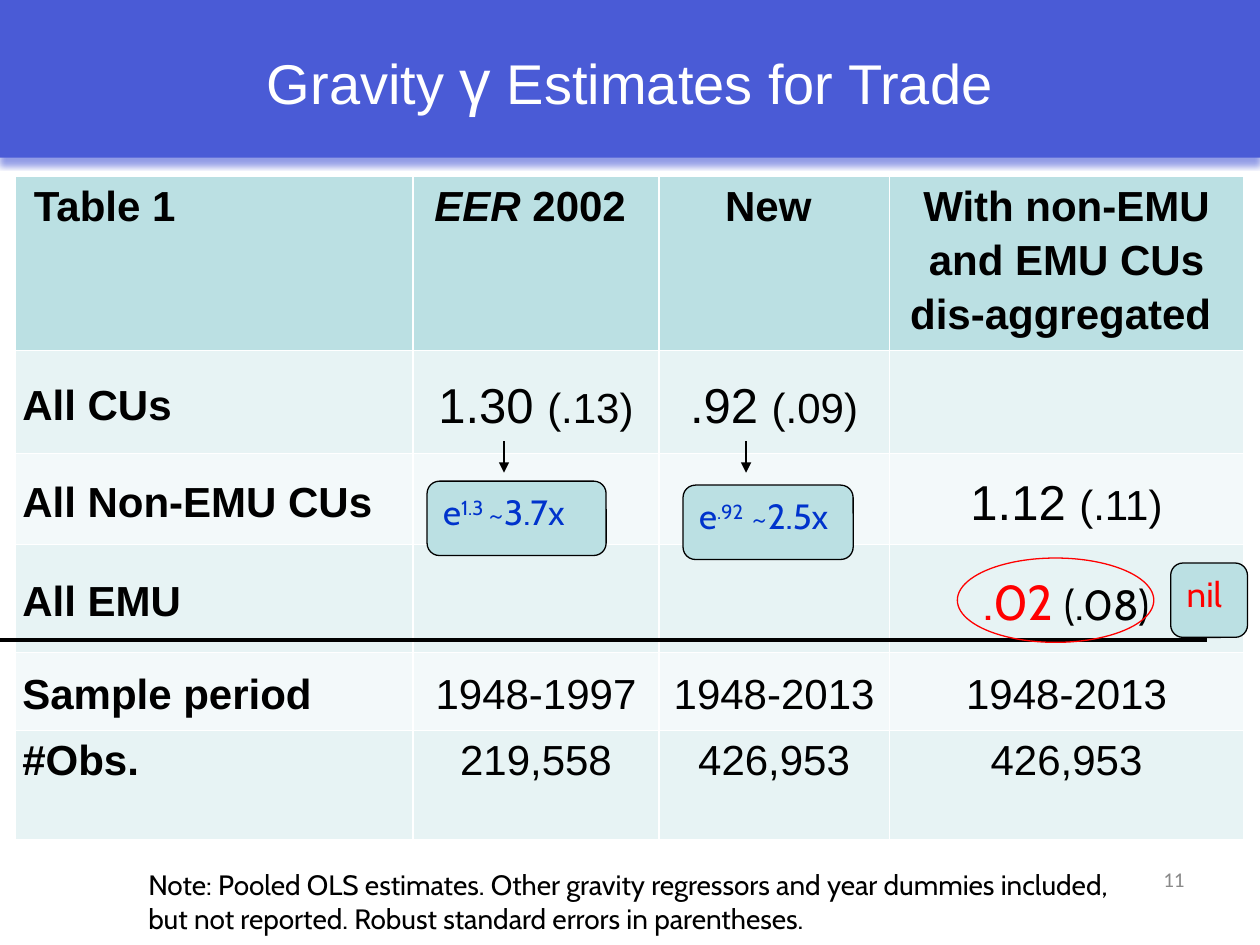
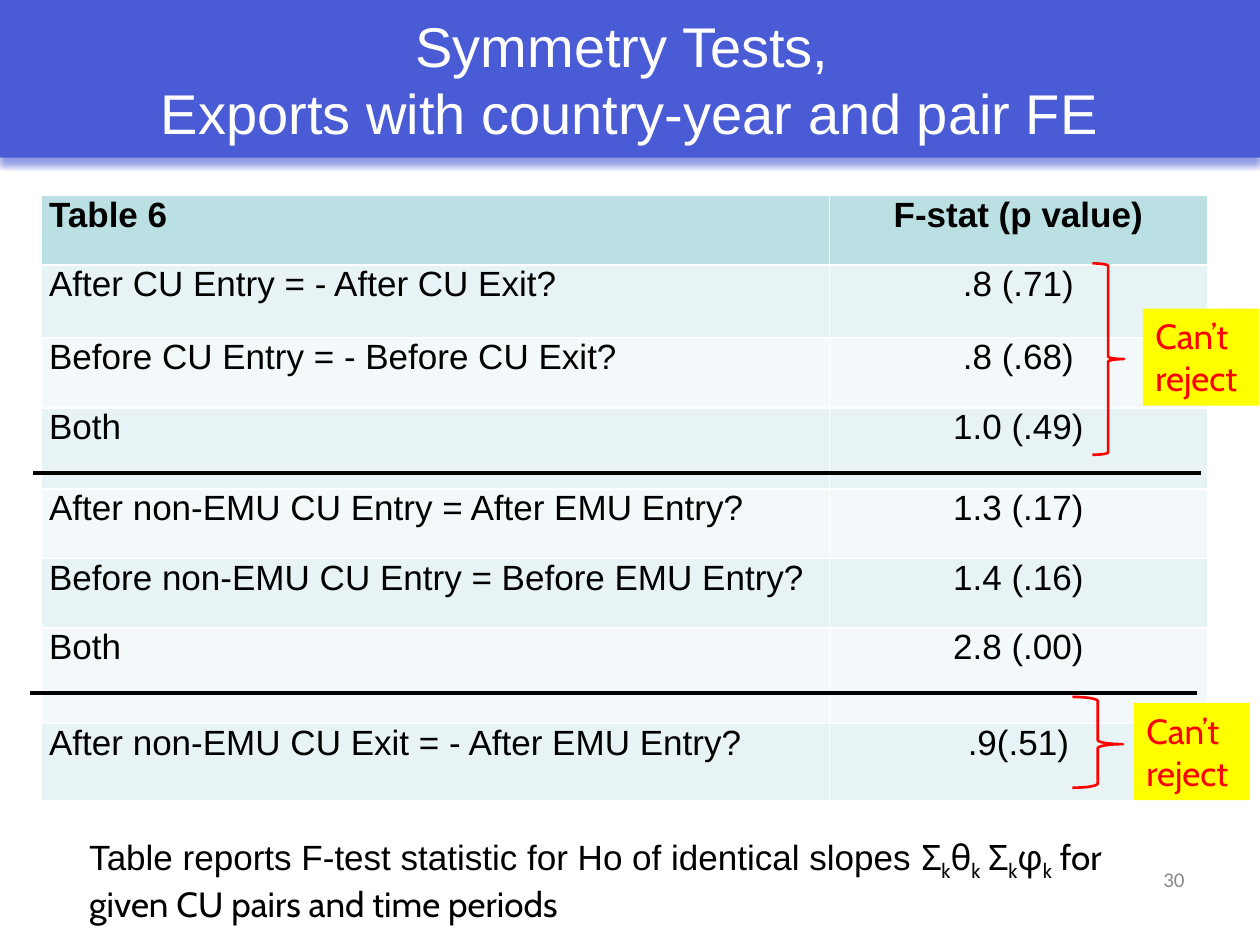
from lxml import etree
from pptx import Presentation
from pptx.dml.color import RGBColor
from pptx.enum.shapes import MSO_CONNECTOR, MSO_SHAPE
from pptx.enum.text import MSO_ANCHOR, MSO_AUTO_SIZE, PP_ALIGN
from pptx.oxml.ns import qn
from pptx.util import Cm, Pt

LEFT, CENTER, RIGHT = PP_ALIGN.LEFT, PP_ALIGN.CENTER, PP_ALIGN.RIGHT
TOP, MIDDLE = MSO_ANCHOR.TOP, MSO_ANCHOR.MIDDLE
ROUNDED, OVAL = MSO_SHAPE.ROUNDED_RECTANGLE, MSO_SHAPE.OVAL
RECTANGLE, BRACE = MSO_SHAPE.RECTANGLE, MSO_SHAPE.RIGHT_BRACE
STRAIGHT = MSO_CONNECTOR.STRAIGHT

# Shared look
BAND, HEADER, ODD_ROW, EVEN_ROW = "4A5BD6", "BBE0E3", "E7F3F4", "F3F9FA"
BLACK, WHITE, GREY, RED, BLUE, YELLOW = "000000", "FFFFFF", "898989", "FF0000", "0033CC", "FFFF00"
TITLE_FONT, NOTE_FONT, NUMBER_FONT = "Arial", "Cabin", "Calibri"
PAGE_WIDTH, PAGE_HEIGHT, BAND_HEIGHT = 25.4, 19.05, 3.18
NUMBER_BOX = (18.21, 17.35, 5.92, 1.32)

# Text is a string or a list of runs; a run is (text, changed format)
BIG, SUPER, SUB = {"size": 28}, {"baseline": 30}, {"baseline": -25}
GREEK, GREEK_SUB = {"font": NOTE_FONT}, {"font": NOTE_FONT, "baseline": -25}

# Slide 1: gravity estimates
GRAVITY_TITLE = [("Gravity ", {}), ("γ", {"size": 36}), (" Estimates for Trade", {})]
GRAVITY_TABLE = {
    "at": (0.3, 3.56),
    "columns": (8.03, 4.95, 4.65, 7.14),
    "heights": (3.35, 2.08, 1.83, 2.18, 1.57, 2.21),
    "size": 24, "spacing": 1.15, "bold_labels": True,
    "anchors": (TOP, MIDDLE, MIDDLE, MIDDLE, MIDDLE, TOP),
    "rows": [
        (" Table 1", [("EER", {"italic": True}), (" 2002 ", {})], "New ",
         "With non-EMU and EMU CUs dis-aggregated "),
        ("All CUs", [("1.30 ", BIG), ("(.13)", {})], [(".92 ", BIG), ("(.09)", {})], ""),
        ("All Non-EMU CUs", "", "", [("1.12 ", BIG), ("(.11)", {})]),
        ("All EMU", "", "", [(".02 ", {"size": 28, "font": NOTE_FONT, "color": RED}),
                             ("(.08)", {"font": NOTE_FONT})]),
        ("Sample period", "1948-1997", "1948-2013", "1948-2013"),
        ("#Obs.", "219,558", "426,953", "426,953"),
    ],
}
GRAVITY_NOTE = ("Note: Pooled OLS estimates. Other gravity regressors and year dummies "
                "included, but not reported. Robust standard errors in parentheses.")
CALLOUTS = [
    ((8.61, 9.7, 3.61, 1.5), [("e", {}), ("1.3 ", SUPER), ("~3.7x", {})], BLUE),
    ((13.77, 9.78, 3.43, 1.5), [("e", {}), (".92", SUPER), (" ~2.5x", {})], BLUE),
    ((23.6, 11.35, 1.55, 1.5), "nil", RED),
]
ARROW_CENTERS = (10.16, 15.04)

# Slide 2: symmetry tests
SYMMETRY_TITLE = "Symmetry Tests, \vExports with country-year and pair FE"
SYMMETRY_TABLE = {
    "at": (0.84, 3.94),
    "columns": (15.88, 7.62),
    "heights": (1.4, 1.47, 1.42, 1.63, 1.4, 1.4, 1.93, 1.55),
    "size": 20, "spacing": 1.0, "bold_labels": False,
    "anchors": (TOP,) * 8,
    "rows": [
        ("Table 6", "F-stat (p value)"),
        ("After CU Entry = - After CU Exit?", ".8 (.71)"),
        ("Before CU Entry = - Before CU Exit?", ".8 (.68)"),
        ("Both", "1.0 (.49)"),
        ("After non-EMU CU Entry = After EMU Entry?", "1.3 (.17)"),
        ("Before non-EMU CU Entry = Before EMU Entry?", "1.4 (.16)"),
        ("Both", "2.8 (.00)"),
        ("After non-EMU CU Exit = - After EMU Entry?", ".9(.51)"),
    ],
}
SYMMETRY_NOTE = [
    ("Table reports F-test statistic for Ho of identical slopes ", {}),
    ("Σ", GREEK), ("k", GREEK_SUB), ("θ", GREEK), ("k", GREEK_SUB),
    (" Σ", GREEK), ("k", GREEK_SUB), ("φ", GREEK), ("k", GREEK_SUB),
    (" for given CU pairs and time periods", GREEK),
]
DIVIDERS = [(0.66, 9.53, 24.21), (0.61, 13.97, 24.13)]
# Each verdict: label box, brace box, brace adjustments
VERDICTS = [
    ((23.04, 6.22, 2.34, 1.96), (22.02, 5.31, 0.64, 3.86), (0.08, 0.5)),
    ((22.86, 14.17, 2.34, 1.96), (21.62, 14.05, 1.02, 1.83), (0.08, 0.52)),
]


def rgb(color):
    return RGBColor.from_string(color)


def lengths(values):
    return [Cm(value) for value in values]


def format_run(run, size, font, color, bold=False, italic=False, baseline=0):
    run.font.size, run.font.name = Pt(size), font
    run.font.bold, run.font.italic = bold, italic
    run.font.color.rgb = rgb(color)
    if baseline:
        run._r.get_or_add_rPr().set("baseline", str(baseline * 1000))


def write(text_frame, text, align=LEFT, spacing=1.0, **base):
    paragraph = text_frame.paragraphs[0]
    paragraph.alignment, paragraph.line_spacing = align, spacing
    paragraph.font.size = Pt(base["size"])
    if isinstance(text, str):
        paragraph.text = text
        for run in paragraph.runs:
            format_run(run, **base)
    else:
        for part, changes in text:
            run = paragraph.add_run()
            run.text = part
            format_run(run, **{**base, **changes})


def add_title(slide, text):
    title = slide.shapes.title
    title.left, title.top, title.width, title.height = lengths((0, 0, PAGE_WIDTH, BAND_HEIGHT))
    title.fill.solid()
    title.fill.fore_color.rgb = rgb(BAND)
    title.text_frame.auto_size = MSO_AUTO_SIZE.NONE
    title.text_frame.vertical_anchor = MIDDLE
    write(title.text_frame, text, CENTER, size=32, font=TITLE_FONT, color=WHITE)
    # Soft shadow under the band
    effects = etree.SubElement(title._element.spPr, qn("a:effectLst"))
    shadow = etree.SubElement(effects, qn("a:outerShdw"), blurRad="40000", dist="50000",
                              dir="5400000", rotWithShape="0")
    shadow_color = etree.SubElement(shadow, qn("a:srgbClr"), val=BAND)
    etree.SubElement(shadow_color, qn("a:alpha"), val="60000")


def add_text(slide, box, text, align=LEFT, anchor=TOP, **base):
    text_frame = slide.shapes.add_textbox(*lengths(box)).text_frame
    text_frame.word_wrap = True
    text_frame.vertical_anchor = anchor
    write(text_frame, text, align, **base)


def add_slide(presentation, title, number):
    slide = presentation.slides.add_slide(presentation.slide_layouts[5])
    add_title(slide, title)
    add_text(slide, NUMBER_BOX, str(number), RIGHT, size=12, font=NUMBER_FONT, color=GREY)
    return slide


def add_results(slide, data):
    rows, columns, heights = data["rows"], data["columns"], data["heights"]
    box = (*data["at"], sum(columns), sum(heights))
    table = slide.shapes.add_table(len(rows), len(columns), *lengths(box)).table
    for column, width in zip(table.columns, columns):
        column.width = Cm(width)
    for row_index, row in enumerate(rows):
        table.rows[row_index].height = Cm(heights[row_index])
        fill = HEADER if row_index == 0 else ODD_ROW if row_index % 2 else EVEN_ROW
        for column_index, text in enumerate(row):
            cell = table.cell(row_index, column_index)
            cell.fill.solid()
            cell.fill.fore_color.rgb = rgb(fill)
            cell.margin_left = cell.margin_right = Cm(0.15)
            cell.margin_top = cell.margin_bottom = 0
            cell.vertical_anchor = data["anchors"][row_index]
            is_label = column_index == 0
            write(cell.text_frame, text, LEFT if is_label else CENTER, data["spacing"],
                  size=data["size"], font=TITLE_FONT, color=BLACK,
                  bold=row_index == 0 or (is_label and data["bold_labels"]))


def add_shape(slide, kind, box, fill=None, line=None, width=0.75):
    shape = slide.shapes.add_shape(kind, *lengths(box))
    shape.shadow.inherit = False
    if fill:
        shape.fill.solid()
        shape.fill.fore_color.rgb = rgb(fill)
    else:
        shape.fill.background()
    if line:
        shape.line.color.rgb = rgb(line)
        shape.line.width = Pt(width)
    else:
        shape.line.fill.background()
    return shape


def add_label(slide, kind, box, text, color, **look):
    text_frame = add_shape(slide, kind, box, **look).text_frame
    text_frame.word_wrap = True
    text_frame.vertical_anchor = TOP
    write(text_frame, text, size=20, font=NOTE_FONT, color=color)


def add_line(slide, start, end, width, arrow=False):
    connector = slide.shapes.add_connector(STRAIGHT, *lengths((*start, *end)))
    connector.line.color.rgb = rgb(BLACK)
    connector.line.width = Pt(width)
    if arrow:
        etree.SubElement(connector.line._get_or_add_ln(), qn("a:tailEnd"), type="triangle")
    etree.SubElement(connector._element.spPr, qn("a:effectLst"))


def build_gravity(presentation):
    slide = add_slide(presentation, GRAVITY_TITLE, 11)
    add_results(slide, GRAVITY_TABLE)
    add_text(slide, (2.74, 17.37, 19.89, 1.63), GRAVITY_NOTE,
             size=16, font=NOTE_FONT, color=BLACK)
    add_line(slide, (0, 12.9), (24.33, 12.9), 2.5)
    for center in ARROW_CENTERS:
        add_line(slide, (center, 8.89), (center, 9.53), 1.5, arrow=True)
    for box, text, color in CALLOUTS:
        add_label(slide, ROUNDED, box, text, color, fill=HEADER, line=BLACK)
    add_shape(slide, OVAL, (19.3, 11.25, 3.96, 1.7), line=RED)


def build_symmetry(presentation):
    slide = add_slide(presentation, SYMMETRY_TITLE, 30)
    add_results(slide, SYMMETRY_TABLE)
    for left, top, right in DIVIDERS:
        add_line(slide, (left, top), (right, top), 2)
    add_text(slide, (1.55, 16.71, 22.66, 1.96), SYMMETRY_NOTE,
             size=20, font=TITLE_FONT, color=BLACK)
    for label_box, brace_box, adjustments in VERDICTS:
        add_label(slide, RECTANGLE, label_box, "Can’t reject", RED, fill=YELLOW)
        brace = add_shape(slide, BRACE, brace_box, line=RED, width=1.5)
        for index, value in enumerate(adjustments):
            brace.adjustments[index] = value


def main():
    presentation = Presentation()
    presentation.slide_width, presentation.slide_height = Cm(PAGE_WIDTH), Cm(PAGE_HEIGHT)
    build_gravity(presentation)
    build_symmetry(presentation)
    presentation.save("out.pptx")


if __name__ == "__main__":
    main()
